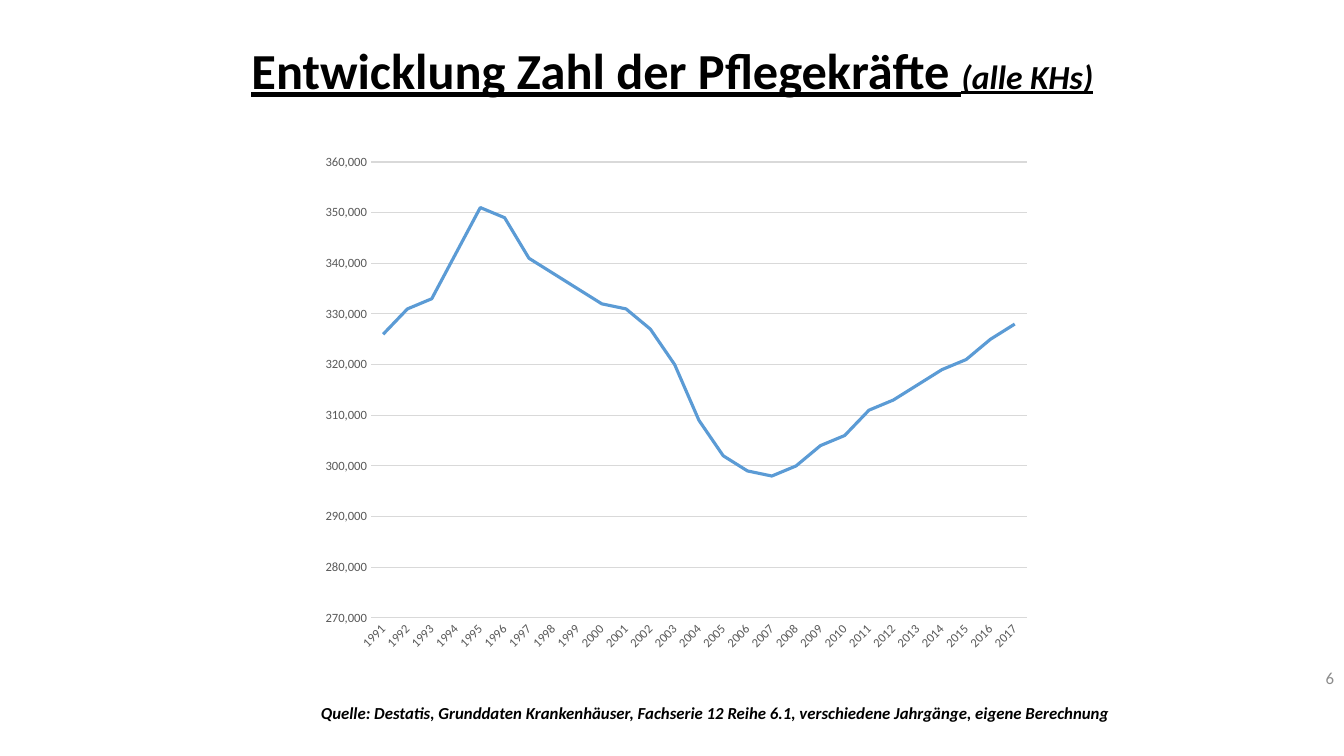
from lxml import etree
from pptx import Presentation
from pptx import util as u
from pptx.chart.data import CategoryChartData
from pptx.dml.color import RGBColor
from pptx.enum import chart as ch, text
from pptx.oxml import parse_xml
from pptx.oxml.ns import nsdecls

SCALE = 914400 / 100.8
FONT = "Calibri"
COLORS = {"text": "000000", "number": "8C8C8C", "label": "595959",
          "grid": "D9D9D9", "line": "5B9BD5"}
STAFF_THOUSANDS = [326, 331, 333, 342, 351, 349, 341, 338, 335,
                   332, 331, 327, 320, 309, 302, 299, 298, 300,
                   304, 306, 311, 313, 316, 319, 321, 325, 328]
CHART_W, CHART_H = 730, 516


def px(*lengths):
    return [u.Emu(round(n * SCALE)) for n in lengths]


def style(font, size, color, bold=None, italic=None):
    font.name = FONT
    font.size = u.Pt(size)
    font.color.rgb = RGBColor.from_string(COLORS[color])
    font.bold = bold
    font.italic = italic


prs = Presentation()
prs.slide_width, prs.slide_height = px(1344, 756)
s = prs.slides.add_slide(prs.slide_layouts[5])

title = s.shapes.title
title.left, title.top, title.width, title.height = px(93, 0, 1159, 146)
tf = title.text_frame
tf.word_wrap = True
tf.auto_size = text.MSO_AUTO_SIZE.NONE
tf.vertical_anchor = text.MSO_ANCHOR.MIDDLE
p = tf.paragraphs[0]
p.alignment = text.PP_ALIGN.CENTER
p.line_spacing = 0.9
for words, size, italic in [("Entwicklung Zahl der Pflegekräfte ", 36, False),
                            ("(alle KHs)", 24, True)]:
    r = p.add_run()
    r.text = words
    style(r.font, size, "text", True, italic)
    r.font.underline = True

data = CategoryChartData(number_format="#,##0")
data.categories = [str(1991 + i) for i in range(len(STAFF_THOUSANDS))]
data.add_series("Pflegekräfte", [n * 1000 for n in STAFF_THOUSANDS])
chart = s.shapes.add_chart(ch.XL_CHART_TYPE.LINE,
                           *px(311, 144, CHART_W, CHART_H), data).chart
chart.has_title = False
chart.has_legend = False
style(chart.font, 10, "text")

plot = chart.plots[0]
plot.vary_by_categories = False
series = plot.series[0]
series.smooth = False
series.marker.style = ch.XL_MARKER_STYLE.NONE
series.format.line.width = u.Pt(2.25)
series.format.line.color.rgb = RGBColor.from_string(COLORS["line"])

years, counts = chart.category_axis, chart.value_axis
for axis in (years, counts):
    axis.major_tick_mark = axis.minor_tick_mark = ch.XL_TICK_MARK.NONE
    style(axis.tick_labels.font, 9, "label")
years.has_major_gridlines = False
years._element.txPr.bodyPr.set("rot", "-2700000")
counts.minimum_scale = 270000
counts.maximum_scale = 360000
counts.major_unit = 10000
counts.tick_labels.number_format = "#,##0"
counts.tick_labels.number_format_is_linked = False
counts.has_major_gridlines = True
counts.format.line.fill.background()
for line in (years.format.line, counts.major_gridlines.format.line):
    line.width = u.Pt(0.75)
    line.color.rgb = RGBColor.from_string(COLORS["grid"])

area = chart._chartSpace.chart.plotArea
for layout in area.findall("{*}layout"):
    area.remove(layout)
layout = parse_xml(f'<c:layout {nsdecls("c")}><c:manualLayout/></c:layout>')
for tag, value in [("layoutTarget", "inner"), ("xMode", "edge"), ("yMode", "edge"),
                   ("x", 60 / CHART_W), ("y", 18 / CHART_H),
                   ("w", 656 / CHART_W), ("h", 456 / CHART_H)]:
    item = etree.SubElement(layout[0], layout.tag.replace("layout", tag))
    item.set("val", str(value))
area.insert(0, layout)

for box, words, color, bold, align, anchor in [
    ((1041, 658, 303, 40), "6", "number", False,
     text.PP_ALIGN.RIGHT, text.MSO_ANCHOR.MIDDLE),
    ((311, 698, 834, 30),
     "Quelle: Destatis, Grunddaten Krankenhäuser, Fachserie 12 Reihe 6.1, "
     "verschiedene Jahrgänge, eigene Berechnung", "text", True,
     text.PP_ALIGN.LEFT, text.MSO_ANCHOR.TOP),
]:
    tf = s.shapes.add_textbox(*px(*box)).text_frame
    tf.word_wrap = True
    tf.vertical_anchor = anchor
    p = tf.paragraphs[0]
    p.alignment = align
    r = p.add_run()
    r.text = words
    style(r.font, 12, color, bold, bold)

prs.save("out.pptx")
